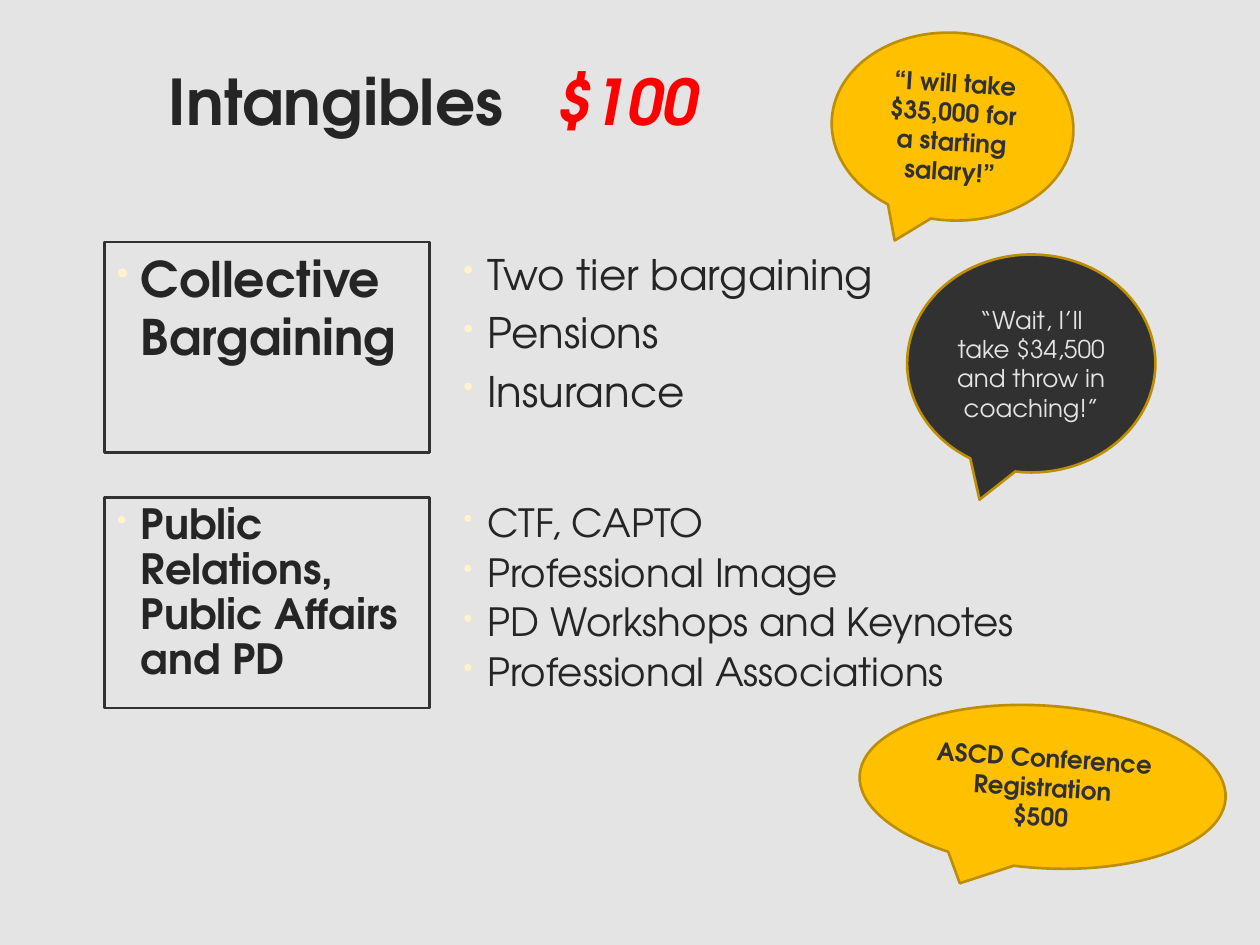
from dataclasses import dataclass

from lxml.etree import SubElement
from pptx import Presentation
from pptx.dml.color import RGBColor
from pptx.enum.shapes import MSO_SHAPE as Shape
from pptx.enum.text import MSO_ANCHOR as Anchor, PP_ALIGN as Align
from pptx.oxml.ns import qn
from pptx.util import Inches, Pt

FONT = "TeX Gyre Adventor"
COLORS = {
    "background": "E4E4E4",
    "text": "252525",
    "dark": "313131",
    "bullet": "FFF2CC",
    "price": "FF0000",
    "gold": "FFC000",
    "outline": "BD8E00",
}
HANGING = Inches(0.19)
ROW_HEIGHT = 1.67


@dataclass
class Topic:
    top: float
    heading: str
    heading_size: float
    points: list[str]
    point_size: float
    line_spacing: float


@dataclass
class Callout:
    box: tuple[float, float, float, float]
    lines: list[str]
    fill: str
    color: str
    bold: bool
    rotation: float = 0


TOPICS = [
    Topic(1.92, "Collective Bargaining", 28,
          ["Two tier bargaining", "Pensions", "Insurance"], 24, 1),
    Topic(3.95, "Public Relations, Public Affairs and PD", 23.8,
          ["CTF, CAPTO", "Professional Image", "PD Workshops and Keynotes",
           "Professional Associations"], 22.2, 0.9),
]
CALLOUTS = [
    Callout((7.2, 2.02, 1.97, 1.73),
            ["“Wait, I’ll take $34,500 and throw in coaching!”"],
            "dark", "background", False),
    Callout((6.6, 0.26, 1.92, 1.49),
            ["“I will take $35,000 for a starting salary!”"],
            "gold", "dark", True, 3.7),
    Callout((6.82, 5.6, 2.91, 1.29),
            ["ASCD Conference", "Registration", "$500"],
            "gold", "dark", True, 3.7),
]


def rgb(name: str) -> RGBColor:
    return RGBColor.from_string(COLORS[name])


def set_font(font, size: float, color: str, bold: bool = False) -> None:
    font.name, font.size, font.bold = FONT, Pt(size), bold
    font.color.rgb = rgb(color)


def add_bullet(paragraph) -> None:
    props = paragraph._p.get_or_add_pPr()
    props.set("marL", str(HANGING))
    props.set("indent", str(-HANGING))
    bullet_color = SubElement(props, qn("a:buClr"))
    SubElement(bullet_color, qn("a:srgbClr"), val=COLORS["bullet"])
    SubElement(props, qn("a:buSzPct"), val="70000")
    SubElement(props, qn("a:buChar"), char="•")


def add_bulleted_box(slide, left: float, top: float, width: float,
                     lines: list[str], size: float, spacing: float,
                     bold: bool = False):
    box = slide.shapes.add_textbox(
        Inches(left), Inches(top), Inches(width), Inches(ROW_HEIGHT))
    frame = box.text_frame
    frame.word_wrap = True
    frame.text = "\n".join(lines)
    for index, paragraph in enumerate(frame.paragraphs):
        add_bullet(paragraph)
        paragraph.line_spacing = spacing
        if index:
            paragraph.space_before = Pt(round(size * 0.2, 1))
        set_font(paragraph.font, size, "text", bold)
    return box


def add_topic(slide, topic: Topic) -> None:
    heading = add_bulleted_box(slide, 0.83, topic.top, 2.58, [topic.heading],
                               topic.heading_size, topic.line_spacing, True)
    heading.line.color.rgb = rgb("dark")
    heading.line.width = Pt(1.5)
    add_bulleted_box(slide, 3.58, topic.top, 5.92, topic.points,
                     topic.point_size, topic.line_spacing)


def add_callout(slide, callout: Callout) -> None:
    bubble = slide.shapes.add_shape(
        Shape.OVAL_CALLOUT, *(Inches(value) for value in callout.box))
    bubble.shadow.inherit = False
    bubble.rotation = callout.rotation
    bubble.fill.solid()
    bubble.fill.fore_color.rgb = rgb(callout.fill)
    bubble.line.color.rgb = rgb("outline")
    bubble.line.width = Pt(1.5)
    frame = bubble.text_frame
    frame.word_wrap = True
    frame.vertical_anchor = Anchor.MIDDLE
    frame.text = "\n".join(callout.lines)
    for paragraph in frame.paragraphs:
        paragraph.alignment = Align.CENTER
        set_font(paragraph.font, 14, callout.color, callout.bold)


def add_title(slide) -> None:
    title = slide.shapes.add_textbox(
        Inches(1.24), Inches(0.45), Inches(8.34), Inches(0.7))
    frame = title.text_frame
    frame.word_wrap = True
    frame.vertical_anchor = Anchor.MIDDLE
    paragraph = frame.paragraphs[0]
    # A tab stop sets the price apart from the category
    tabs = SubElement(paragraph._p.get_or_add_pPr(), qn("a:tabLst"))
    SubElement(tabs, qn("a:tab"), pos=str(Inches(3.08)), algn="l")
    category, price = paragraph.add_run(), paragraph.add_run()
    category.text, price.text = "Intangibles\t", "$100"
    set_font(category.font, 36, "text", True)
    set_font(price.font, 36, "price", True)
    price.font.italic = True


def main() -> None:
    deck = Presentation()
    deck.slide_width, deck.slide_height = Inches(10), Inches(7.5)
    slide = deck.slides.add_slide(deck.slide_layouts[6])
    slide.background.fill.solid()
    slide.background.fill.fore_color.rgb = rgb("background")

    # Topic rows: boxed heading and its points
    for topic in TOPICS:
        add_topic(slide, topic)
    add_title(slide)
    # Speech bubbles
    for callout in CALLOUTS:
        add_callout(slide, callout)

    deck.save("out.pptx")


if __name__ == "__main__":
    main()
